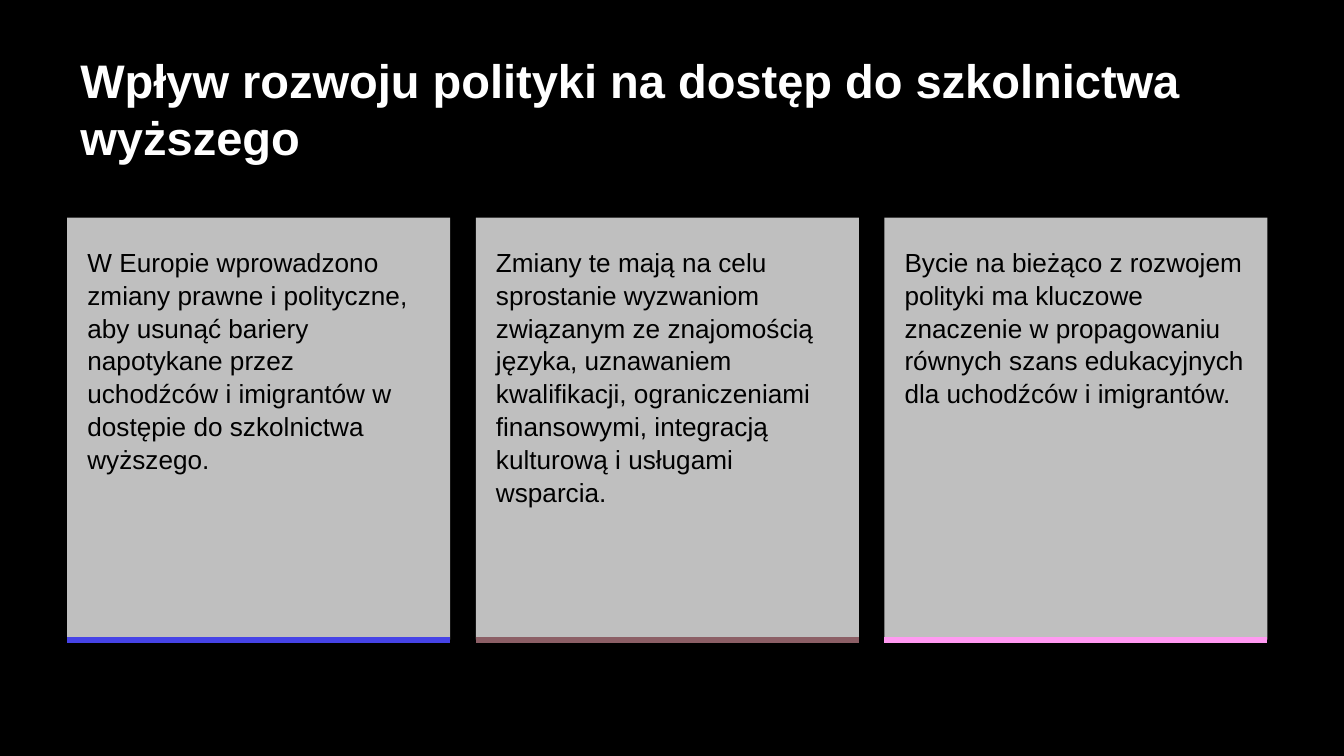
from dataclasses import dataclass

from lxml import etree
from pptx import Presentation
from pptx.dml.color import RGBColor
from pptx.enum.shapes import MSO_CONNECTOR, MSO_SHAPE
from pptx.enum.text import MSO_ANCHOR, PP_ALIGN
from pptx.oxml.ns import qn
from pptx.slide import Slide
from pptx.text.text import TextFrame
from pptx.util import Inches, Pt

RECTANGLE = MSO_SHAPE.RECTANGLE
STRAIGHT = MSO_CONNECTOR.STRAIGHT
TOP, MIDDLE = MSO_ANCHOR.TOP, MSO_ANCHOR.MIDDLE
LEFT = PP_ALIGN.LEFT

FONT = "Arial"
BLACK, WHITE = "000000", "FFFFFF"
SLIDE_WIDTH = 10
SLIDE_HEIGHT = SLIDE_WIDTH * 9 / 16
MARGIN = 0.5
CARD_TOP, CARD_WIDTH, CARD_HEIGHT = 1.62, 2.85, 3.14
CARD_PITCH = 3.04
CARD_OPACITY = 75


@dataclass(frozen=True)
class Card:
    message: str
    accent: str


HEADING = "Wpływ rozwoju polityki na dostęp do szkolnictwa wyższego"
CARDS = [
    Card(
        "W Europie wprowadzono zmiany prawne i polityczne, aby usunąć bariery "
        "napotykane przez uchodźców i imigrantów w dostępie do szkolnictwa wyższego.",
        "4643E7",
    ),
    Card(
        "Zmiany te mają na celu sprostanie wyzwaniom związanym ze znajomością języka, "
        "uznawaniem kwalifikacji, ograniczeniami finansowymi, integracją kulturową "
        "i usługami wsparcia.",
        "8C5F66",
    ),
    Card(
        "Bycie na bieżąco z rozwojem polityki ma kluczowe znaczenie w propagowaniu "
        "równych szans edukacyjnych dla uchodźców i imigrantów.",
        "FF99F1",
    ),
]


def color(value: str) -> RGBColor:
    return RGBColor.from_string(value)


def write(frame: TextFrame, text: str, size: float, ink: str, anchor: MSO_ANCHOR,
          insets: tuple[float, float, float, float], bold: bool = False) -> None:
    frame.word_wrap = True
    frame.vertical_anchor = anchor
    (frame.margin_left, frame.margin_top,
     frame.margin_right, frame.margin_bottom) = map(Inches, insets)
    paragraph = frame.paragraphs[0]
    paragraph.text = text
    paragraph.alignment = LEFT
    paragraph.font.name = FONT
    paragraph.font.size = Pt(size)
    paragraph.font.bold = bold
    paragraph.font.color.rgb = color(ink)


def draw_heading(slide: Slide) -> None:
    heading = slide.shapes.add_textbox(
        Inches(MARGIN), Inches(0.49), Inches(9), Inches(0.63))
    write(heading.text_frame, HEADING, 25.2, WHITE, MIDDLE,
          (0.1, 0.1, 0.1, 0.1), bold=True)


def draw_card(slide: Slide, card: Card, left: float) -> None:
    panel = slide.shapes.add_shape(
        RECTANGLE, Inches(left), Inches(CARD_TOP),
        Inches(CARD_WIDTH), Inches(CARD_HEIGHT))
    panel.shadow.inherit = False
    panel.fill.solid()
    panel.fill.fore_color.rgb = color(WHITE)
    panel.line.fill.background()
    fill_color = panel.fill._xPr.find(qn("a:solidFill"))[0]
    etree.SubElement(fill_color, qn("a:alpha")).set("val", str(CARD_OPACITY * 1000))
    write(panel.text_frame, card.message, 14, BLACK, TOP, (0.15, 0.2, 0.15, 0.1))
    paragraph = panel.text_frame.paragraphs[0]
    paragraph.line_spacing = 1.05
    paragraph.space_after = Pt(10)


def draw_accent(slide: Slide, card: Card, left: float) -> None:
    base = Inches(CARD_TOP + CARD_HEIGHT)
    accent = slide.shapes.add_connector(
        STRAIGHT, Inches(left), base, Inches(left + CARD_WIDTH), base)
    accent.line.color.rgb = color(card.accent)
    accent.line.width = Pt(3)
    etree.SubElement(accent._element.spPr, qn("a:effectLst"))


def main() -> None:
    deck = Presentation()
    deck.slide_width, deck.slide_height = Inches(SLIDE_WIDTH), Inches(SLIDE_HEIGHT)
    slide = deck.slides.add_slide(deck.slide_layouts[6])
    slide.background.fill.solid()
    slide.background.fill.fore_color.rgb = color(BLACK)

    draw_heading(slide)
    for index, card in enumerate(CARDS):
        left = MARGIN + index * CARD_PITCH
        draw_card(slide, card, left)
        draw_accent(slide, card, left)
    deck.save("out.pptx")


if __name__ == "__main__":
    main()
